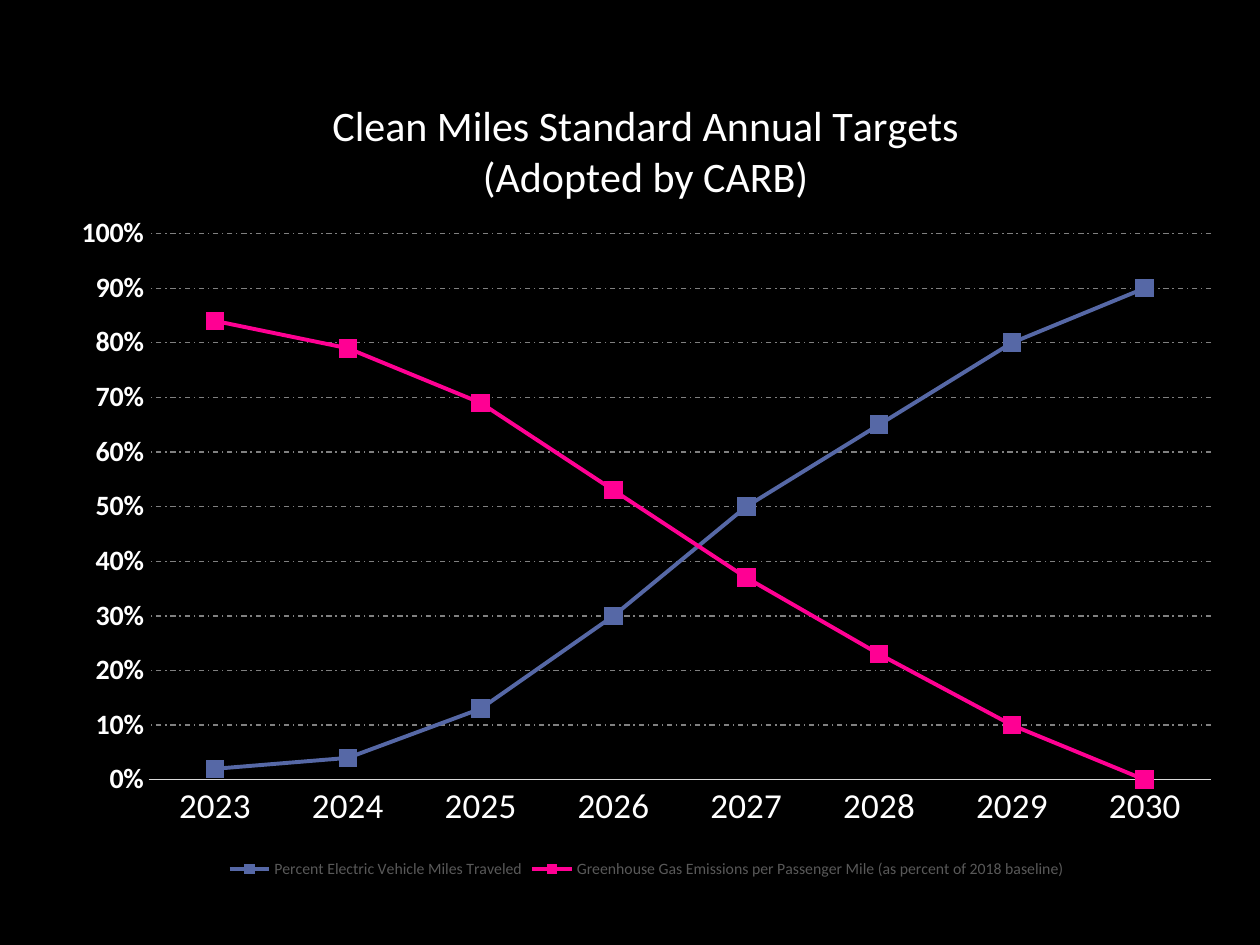
from lxml import etree
from pptx import Presentation
from pptx.chart.data import CategoryChartData
from pptx.dml.color import RGBColor
from pptx.enum.chart import (XL_CHART_TYPE, XL_LEGEND_POSITION as LegendPosition,
                             XL_MARKER_STYLE as MarkerStyle, XL_TICK_MARK as TickMark)
from pptx.enum.dml import MSO_LINE
from pptx.oxml.ns import qn
from pptx.util import Inches, Pt

BLACK = RGBColor(0x00, 0x00, 0x00)
WHITE = RGBColor(0xFF, 0xFF, 0xFF)
AXIS_GRAY = RGBColor(0xD9, 0xD9, 0xD9)
GRID_GRAY = RGBColor(0x80, 0x80, 0x80)
LEGEND_GRAY = RGBColor(0x59, 0x59, 0x59)
BLUE = RGBColor(0x56, 0x68, 0xA6)
PINK = RGBColor(0xFF, 0x00, 0x93)
FONT = "Calibri"

TITLE_LINES = ["Clean Miles Standard Annual Targets", "(Adopted by CARB)"]
YEARS = [str(year) for year in range(2023, 2031)]
TARGETS = [
    ("Percent Electric Vehicle Miles Traveled", BLUE,
     [0.02, 0.04, 0.13, 0.3, 0.5, 0.65, 0.8, 0.9]),
    ("Greenhouse Gas Emissions per Passenger Mile (as percent of 2018 baseline)", PINK,
     [0.84, 0.79, 0.69, 0.53, 0.37, 0.23, 0.1, 0]),
]


def style_font(font, size, color, bold=False):
    font.name, font.size, font.bold = FONT, Pt(size), bold
    font.color.rgb = color


def style_line(line, color, width):
    line.color.rgb = color
    line.width = Pt(width)


def set_layout(parent, index, **settings):
    """Place a chart part by fractions of the chart's box."""
    for old in parent.findall(qn("c:layout")):
        parent.remove(old)
    layout = etree.Element(qn("c:layout"))
    manual = etree.SubElement(layout, qn("c:manualLayout"))
    for tag, value in settings.items():
        etree.SubElement(manual, qn(f"c:{tag}")).set("val", str(value))
    parent.insert(index, layout)


def add_chart_title(chart):
    title = chart.chart_title
    frame = title.text_frame
    frame.text = "\n".join(TITLE_LINES)
    for paragraph in frame.paragraphs:
        style_font(paragraph.font, 24, WHITE)
    title.include_in_layout = False
    set_layout(title._element, 1, xMode="edge", yMode="edge", x=0.23, y=0.04)


def style_axes(chart):
    years, percent = chart.category_axis, chart.value_axis
    for axis in (years, percent):
        axis.major_tick_mark = axis.minor_tick_mark = TickMark.NONE
    style_font(years.tick_labels.font, 20, WHITE)
    style_line(years.format.line, AXIS_GRAY, 0.75)

    percent.minimum_scale, percent.maximum_scale, percent.major_unit = 0, 1, 0.1
    style_font(percent.tick_labels.font, 16, WHITE, bold=True)
    percent.tick_labels.number_format = "0%"
    percent.tick_labels.number_format_is_linked = False
    percent.format.line.fill.background()
    grid = percent.major_gridlines.format.line
    style_line(grid, GRID_GRAY, 0.75)
    grid.dash_style = MSO_LINE.DASH_DOT


def style_series(series, color):
    series.smooth = False
    style_line(series.format.line, color, 2.25)
    marker = series.marker
    marker.style, marker.size = MarkerStyle.SQUARE, 10
    marker.format.fill.solid()
    marker.format.fill.fore_color.rgb = color
    marker.format.line.color.rgb = color


def add_targets_chart(slide, left, top, width, height):
    data = CategoryChartData(number_format="0%")
    data.categories = YEARS
    for name, _, values in TARGETS:
        data.add_series(name, values)
    chart = slide.shapes.add_chart(
        XL_CHART_TYPE.LINE_MARKERS, left, top, width, height, data).chart
    style_font(chart.font, 10, BLACK)
    add_chart_title(chart)
    style_axes(chart)

    # Lines and markers
    plot = chart.plots[0]
    plot.vary_by_categories = False
    for series, (_, color, _) in zip(plot.series, TARGETS):
        style_series(series, color)

    # Legend below the plot
    chart.has_legend = True
    chart.legend.position = LegendPosition.BOTTOM
    chart.legend.include_in_layout = False
    style_font(chart.legend.font, 9, LEGEND_GRAY)

    # Plot area, leaving room for title and legend
    plot_area = chart._chartSpace.find(".//" + qn("c:plotArea"))
    set_layout(plot_area, 0, layoutTarget="inner", xMode="edge", yMode="edge",
               x=0.077, y=0.208, w=0.903, h=0.666)


def main():
    prs = Presentation()
    prs.slide_width, prs.slide_height = Inches(10), Inches(7.5)
    slide = prs.slides.add_slide(prs.slide_layouts[6])
    slide.background.fill.solid()
    slide.background.fill.fore_color.rgb = BLACK
    add_targets_chart(slide, Inches(0.46), Inches(0.5), Inches(9.34), Inches(6.51))
    prs.save("out.pptx")


if __name__ == "__main__":
    main()
